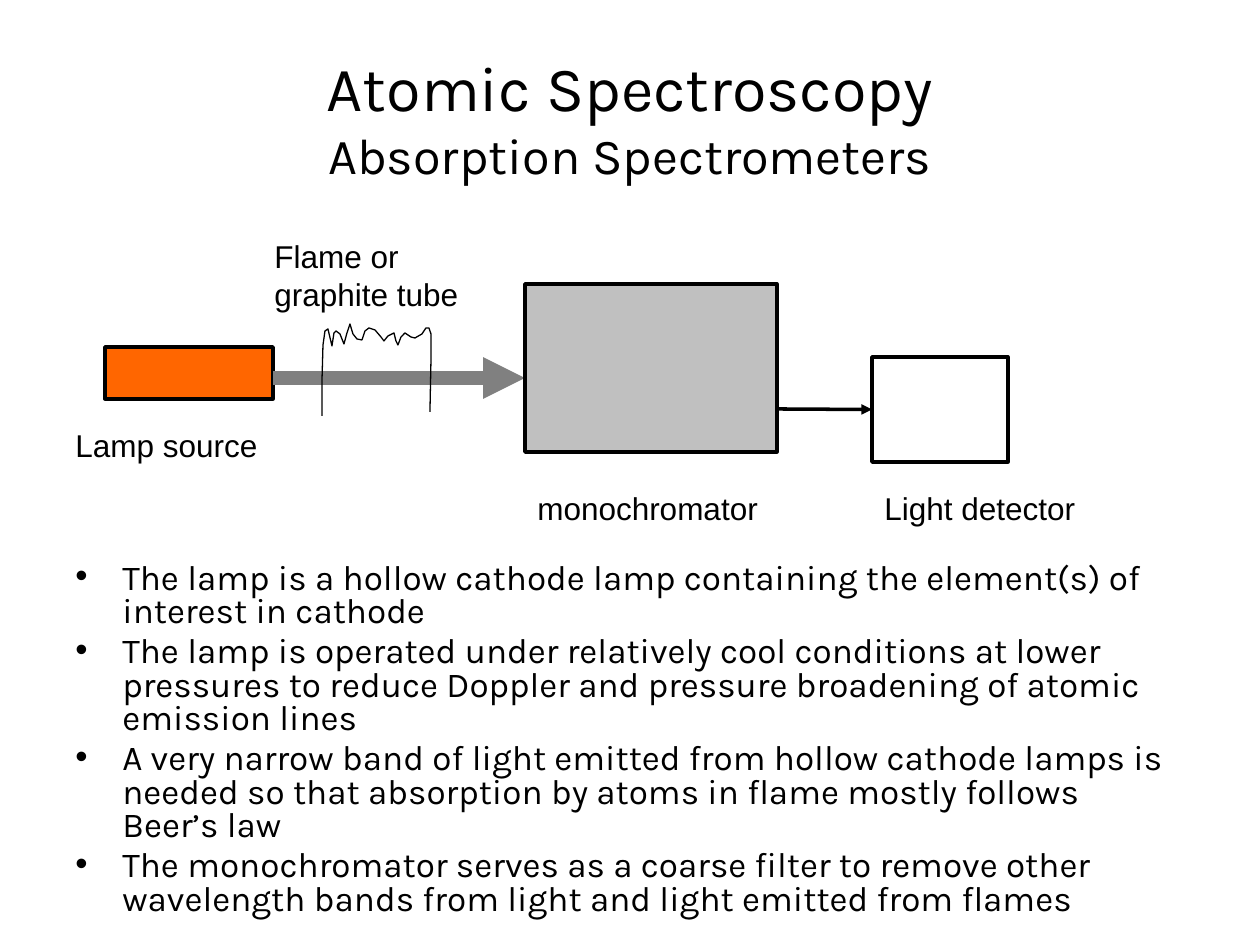
from lxml import etree
from pptx import Presentation
from pptx.dml.color import RGBColor
from pptx.enum.shapes import MSO_CONNECTOR, MSO_SHAPE
from pptx.enum.text import MSO_ANCHOR, MSO_AUTO_SIZE, PP_ALIGN
from pptx.oxml.ns import qn
from pptx.util import Pt

EMU_PER_PX = 914400 / 126
RECT = MSO_SHAPE.RECTANGLE
STRAIGHT = MSO_CONNECTOR.STRAIGHT
MIDDLE = MSO_ANCHOR.MIDDLE
CENTER = PP_ALIGN.CENTER
GROW = MSO_AUTO_SIZE.SHAPE_TO_FIT_TEXT
LEFT_SIDE = 1

BLACK = RGBColor(0x00, 0x00, 0x00)
ORANGE = RGBColor(0xFF, 0x66, 0x00)
SILVER = RGBColor(0xC0, 0xC0, 0xC0)
GRAY = RGBColor(0x80, 0x80, 0x80)

BULLETS = [
    "The lamp is a hollow cathode lamp containing the element(s) of interest in cathode",
    "The lamp is operated under relatively cool conditions at lower pressures "
    "to reduce Doppler and pressure broadening of atomic emission lines",
    "A very narrow band of light emitted from hollow cathode lamps is needed "
    "so that absorption by atoms in flame mostly follows Beer’s law",
    "The monochromator serves as a coarse filter to remove other wavelength "
    "bands from light and light emitted from flames",
]
LABELS = [
    ("Lamp source", 63, 420, 210, 50),
    ("Flame or graphite tube", 262, 231, 231, 88),
    ("monochromator", 525, 483, 262, 50),
    ("Light detector", 872, 483, 220, 50),
]
FLAME = [
    (322, 416), (322, 380), (323, 345), (325, 331), (328, 329), (332, 346),
    (334, 333), (336, 331), (340, 334), (344, 344), (347, 333), (350, 324),
    (353, 334), (357, 339), (362, 340), (365, 331), (369, 328), (375, 330),
    (381, 337), (384, 341), (388, 336), (394, 333), (396, 341), (398, 345),
    (401, 337), (405, 333), (411, 337), (415, 338), (422, 334), (426, 328),
    (429, 328), (431, 334), (431, 360), (430, 412),
]


def px(n):
    return round(n * EMU_PER_PX)


def add_text_box(s, x, y, w, h):
    tf = s.shapes.add_textbox(px(x), px(y), px(w), px(h)).text_frame
    tf.word_wrap = True
    return tf


def add_run(p, text, size, font="Karla"):
    r = p.add_run()
    r.text = text
    r.font.name = font
    r.font.size = Pt(size)
    r.font.color.rgb = BLACK


def add_title(s, title, subtitle):
    tf = add_text_box(s, 63, 38, 1134, 157)
    tf.vertical_anchor = MIDDLE
    p = tf.paragraphs[0]
    p.alignment = CENTER
    add_run(p, title, 36)
    p.add_line_break()
    add_run(p, subtitle, 28.8)


def add_label(s, text, x, y, w, h):
    tf = add_text_box(s, x, y, w, h)
    tf.auto_size = GROW
    add_run(tf.paragraphs[0], text, 18, font="Arial")


def add_bullets(s, items):
    tf = add_text_box(s, 63, 557, 1134, 315)
    for i, item in enumerate(items):
        p = tf.add_paragraph() if i else tf.paragraphs[0]
        p.line_spacing = 0.8
        p.space_before = Pt(3.5)
        add_run(p, item, 20)
        pPr = p._p.get_or_add_pPr()
        pPr.set("marL", str(px(47)))
        pPr.set("indent", str(-px(47)))
        etree.SubElement(pPr, qn("a:buFont")).set("typeface", "Arial")
        etree.SubElement(pPr, qn("a:buChar")).set("char", "•")


def style_shape(sp, fill, width):
    sp.shadow.inherit = False
    if fill is None:
        sp.fill.background()
    else:
        sp.fill.solid()
        sp.fill.fore_color.rgb = fill
    sp.line.color.rgb = BLACK
    sp.line.width = Pt(width)


def add_box(s, x, y, w, h, fill=None):
    sp = s.shapes.add_shape(RECT, px(x), px(y), px(w), px(h))
    style_shape(sp, fill, 2)
    return sp


def add_arrow(s, x1, x2, y, color, width):
    """Draw a horizontal arrow from x1 to x2."""
    line = s.shapes.add_connector(STRAIGHT, px(x1), px(y), px(x2), px(y))
    line.line.color.rgb = color
    line.line.width = Pt(width)
    etree.SubElement(line.line._get_or_add_ln(), qn("a:tailEnd")).set("type", "triangle")
    etree.SubElement(line._element.spPr, qn("a:effectLst"))
    return line


def add_outline(s, points):
    builder = s.shapes.build_freeform(*points[0], scale=EMU_PER_PX)
    builder.add_line_segments(points[1:], close=False)
    style_shape(builder.convert_to_shape(), None, 0.75)


def main():
    prs = Presentation()
    prs.slide_width, prs.slide_height = px(1260), px(945)
    s = prs.slides.add_slide(prs.slide_layouts[6])

    add_title(s, "Atomic Spectroscopy", "Absorption Spectrometers")
    add_bullets(s, BULLETS)

    add_box(s, 105, 347, 168, 52, ORANGE)
    add_arrow(s, 273, 525, 378, GRAY, 8)
    add_outline(s, FLAME)
    add_box(s, 525, 284, 252, 168, SILVER)
    detector = add_box(s, 872, 357, 136, 105)
    signal = add_arrow(s, 777, 872, 409, BLACK, 2)
    signal.end_connect(detector, LEFT_SIDE)

    for label in LABELS:
        add_label(s, *label)

    prs.save("out.pptx")


if __name__ == "__main__":
    main()
